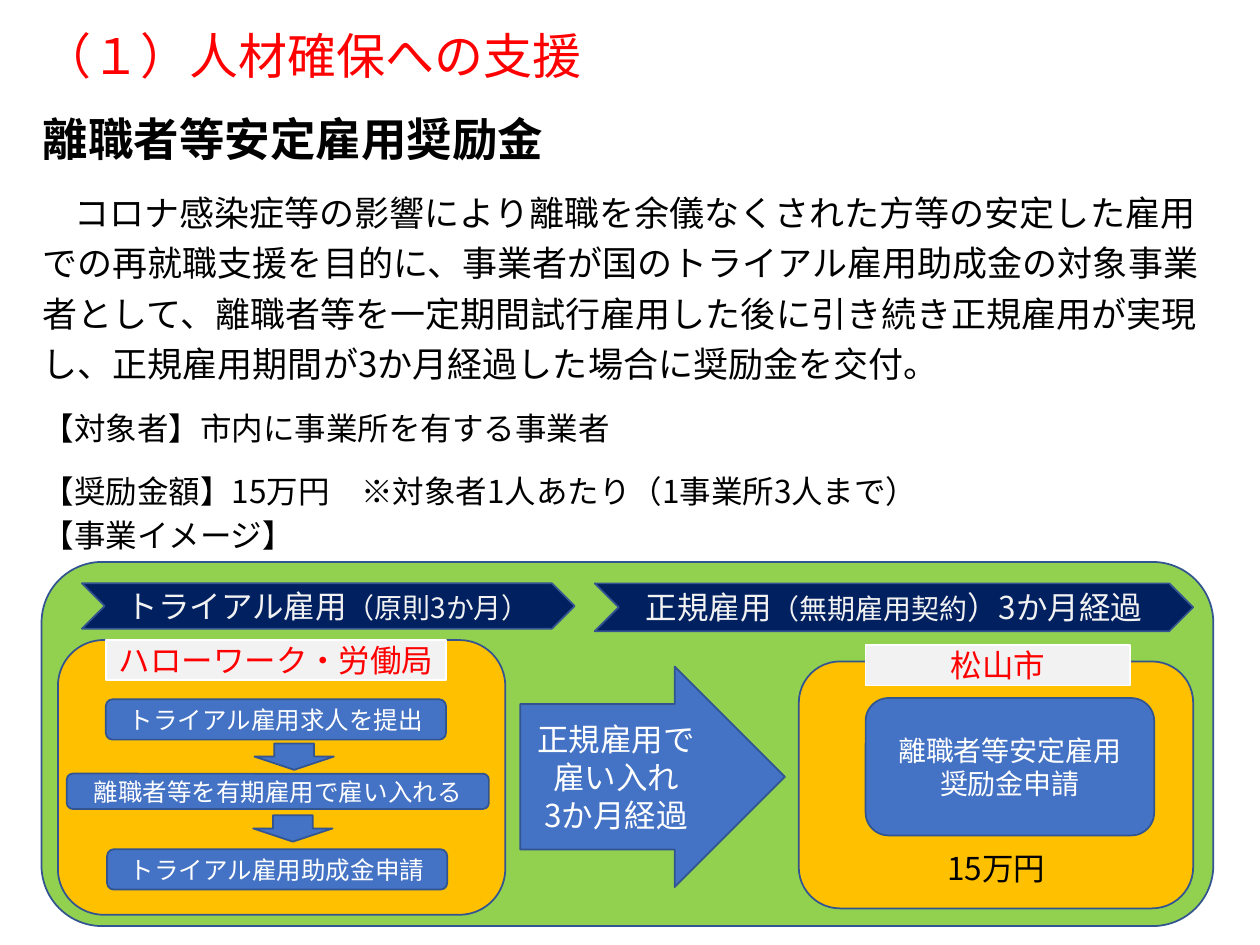
from pptx import Presentation
from pptx.dml.color import RGBColor
from pptx.enum.shapes import MSO_SHAPE
from pptx.enum.text import MSO_ANCHOR, PP_ALIGN
from pptx.util import Inches, Pt
from lxml import etree

FONT = "Noto Sans CJK JP"
A = "http://schemas.openxmlformats.org/drawingml/2006/main"
ROUND, CHEVRON, RECT = MSO_SHAPE.ROUNDED_RECTANGLE, MSO_SHAPE.CHEVRON, MSO_SHAPE.RECTANGLE
RIGHT, DOWN = MSO_SHAPE.RIGHT_ARROW, MSO_SHAPE.DOWN_ARROW
TOP, MIDDLE = MSO_ANCHOR.TOP, MSO_ANCHOR.MIDDLE
LEFT, CENTER = PP_ALIGN.LEFT, PP_ALIGN.CENTER

RED = RGBColor(0xFF, 0x00, 0x00)
BLACK = RGBColor(0x00, 0x00, 0x00)
WHITE = RGBColor(0xFF, 0xFF, 0xFF)
PALE = RGBColor(0xF2, 0xF2, 0xF2)
GREEN = RGBColor(0x92, 0xD0, 0x50)
AMBER = RGBColor(0xFF, 0xC0, 0x00)
NAVY = RGBColor(0x00, 0x20, 0x60)
BLUE = RGBColor(0x44, 0x72, 0xC4)
EDGE = RGBColor(0x32, 0x54, 0x91)


def write(p, runs, color, align=LEFT, bold=False):
    """Fill a paragraph with (text, size) runs."""
    p.alignment = align
    for text, size in runs:
        r = p.add_run()
        r.text = text
        r.font.size = Pt(size)
        r.font.name = FONT
        r.font.bold = bold
        r.font.color.rgb = color
        etree.SubElement(r.font._element, f"{{{A}}}ea", typeface=FONT)


def add_box(kind, box, fill, line=EDGE, paragraphs=(), color=WHITE):
    """Add a filled shape with centred paragraphs, each a list of runs."""
    sp = s.shapes.add_shape(kind, *map(Inches, box))
    sp.shadow.inherit = False
    sp.fill.solid()
    sp.fill.fore_color.rgb = fill
    sp.line.color.rgb = line
    sp.line.width = Pt(1)
    tf = sp.text_frame
    tf.word_wrap = True
    tf.vertical_anchor = MIDDLE
    for i, runs in enumerate(paragraphs):
        write(tf.add_paragraph() if i else tf.paragraphs[0], runs, color, CENTER)
    return sp


prs = Presentation()
prs.slide_width, prs.slide_height = Inches(10), Inches(7.5)
s = prs.slides.add_slide(prs.slide_layouts[5])

# Title
title = s.shapes.title
title.left, title.top, title.width, title.height = map(Inches, (0.24, 0.2, 9.5, 0.56))
tf = title.text_frame
tf.margin_top = tf.margin_bottom = 0
tf.vertical_anchor = TOP
write(tf.paragraphs[0], [("（１）人材確保への支援", 28)], RED)

# Description: runs, bold, space before, line spacing
description = [
    ([("離職者等安定雇用奨励金", 26)], True, 0, 1.0),
    ([("　", 18),
      ("コロナ感染症等の影響により離職を余儀なくされた方等の安定した雇用での再就職支援を目的に、"
       "事業者が国のトライアル雇用助成金の対象事業者として、離職者等を一定期間試行雇用した後に"
       "引き続き正規雇用が実現し、正規雇用期間が3か月経過した場合に奨励金を交付。", 20)],
     False, 10, 1.2),
    ([("【対象者】市内に事業所を有する事業者", 18)], False, 10, 1.2),
    ([("【奨励金額】15万円　※対象者1人あたり（1事業所3人まで）", 18)], False, 10, 1.2),
    ([("【事業イメージ】", 18)], False, 6, 0.9),
]
tf = s.shapes.add_textbox(*map(Inches, (0.24, 0.83, 9.5, 3.6))).text_frame
tf.word_wrap = True
for i, (runs, bold, before, spacing) in enumerate(description):
    p = tf.add_paragraph() if i else tf.paragraphs[0]
    p.space_before = Pt(before)
    p.line_spacing = spacing
    write(p, runs, BLACK, bold=bold)

# Diagram background and left panel
add_box(ROUND, (0.33, 4.46, 9.3, 2.89), GREEN)
add_box(ROUND, (0.46, 5.08, 3.55, 2.18), AMBER)

# Phase chevrons
add_box(CHEVRON, (0.65, 4.63, 3.91, 0.36), NAVY, color=PALE,
        paragraphs=[[("トライアル雇用", 18), ("（原則3か月）", 16)]])
add_box(CHEVRON, (4.72, 4.63, 4.75, 0.38), NAVY, color=PALE,
        paragraphs=[[("正規雇用", 18), ("（無期雇用契約", 16), ("）3か月経過", 18)]])

# Arrow between the panels
arrow = add_box(RIGHT, (4.13, 5.29, 2.1, 1.75), BLUE,
                paragraphs=[[("正規雇用で雇い入れ", 18)], [("3か月経過", 18)]])
arrow.adjustments[0] = 0.66

# Right panel and the panel labels
add_box(ROUND, (6.34, 5.25, 3.13, 1.96), AMBER)
for box, label in [((6.87, 5.12, 2.1, 0.32), "松山市"),
                   ((0.84, 5.08, 2.7, 0.32), "ハローワーク・労働局")]:
    add_box(RECT, box, PALE, WHITE, [[(label, 18)]], RED)

# Steps in the left panel
for box, step in [((0.84, 5.55, 2.7, 0.32), "トライアル雇用求人を提出"),
                  ((0.53, 6.14, 3.35, 0.28), "離職者等を有期雇用で雇い入れる"),
                  ((0.85, 6.74, 2.7, 0.32), "トライアル雇用助成金申請")]:
    add_box(ROUND, box, BLUE, paragraphs=[[(step, 14)]])
for left, top in [(2.02, 5.9), (2.01, 6.47)]:
    add_box(DOWN, (left, top, 0.63, 0.21), BLUE)

# Application and amount in the right panel
add_box(ROUND, (6.87, 5.54, 2.29, 1.09), BLUE,
        paragraphs=[[("離職者等安定雇用奨励金申請", 16)]])
tf = s.shapes.add_textbox(*map(Inches, (7.42, 6.69, 1.42, 0.4))).text_frame
tf.word_wrap = True
write(tf.paragraphs[0], [("15万円", 18)], BLACK)

prs.save("out.pptx")
